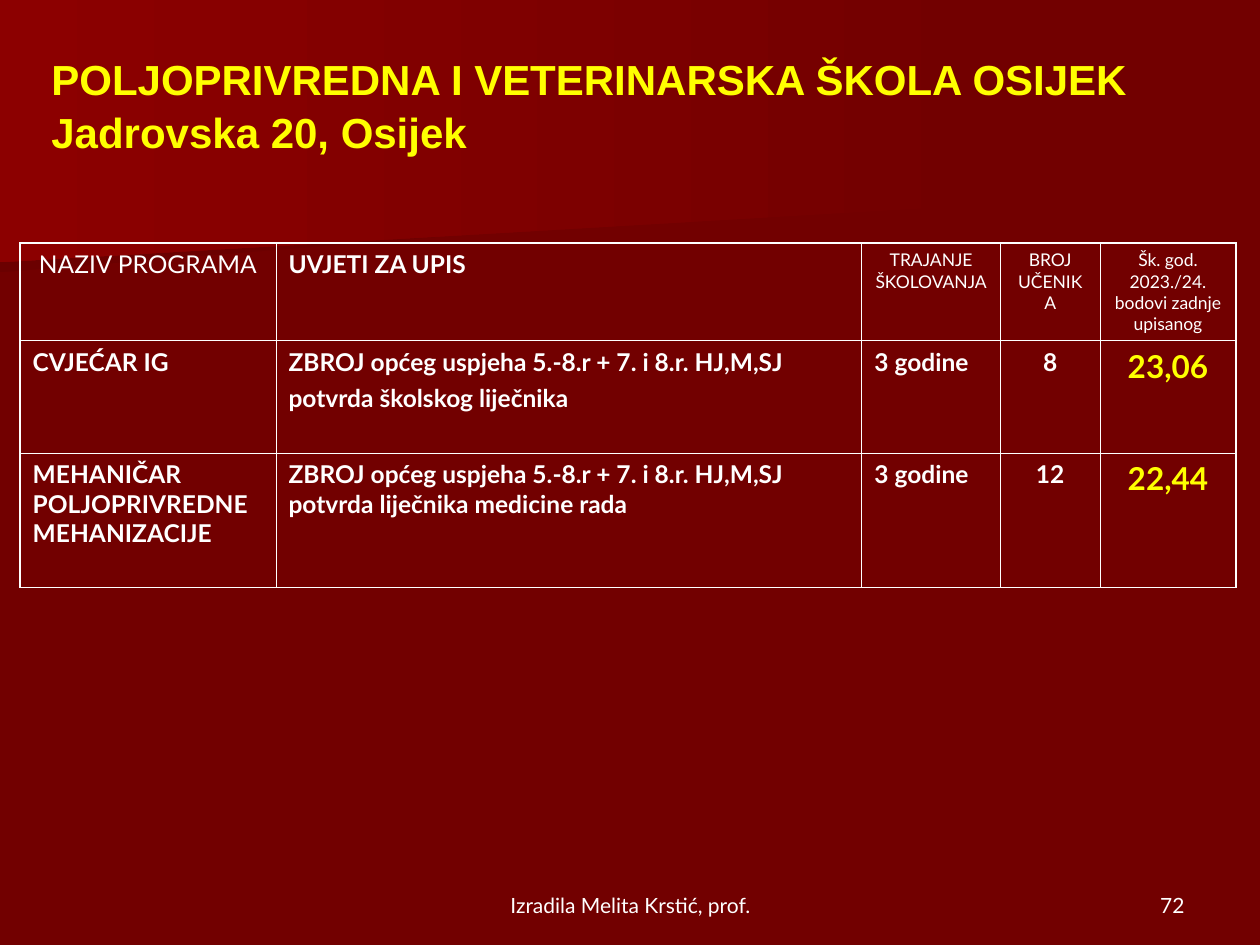
from lxml.etree import SubElement
from pptx import Presentation
from pptx.dml.color import RGBColor
from pptx.enum.text import MSO_ANCHOR as Anchor, PP_ALIGN as Align
from pptx.oxml.ns import qn
from pptx.util import Pt

PX = 9144
WHITE, GOLD = "FFFFFF", "FFFF00"
COLS = [203, 465, 110, 79, 108]
ROWS = [77, 89, 107]
HEADS = ["NAZIV PROGRAMA", "UVJETI ZA UPIS", "TRAJANJE ŠKOLOVANJA",
         "BROJ UČENIKA", "Šk. god. 2023./24. bodovi zadnje upisanog"]
RULE = "ZBROJ općeg uspjeha 5.-8.r + 7. i 8.r. HJ,M,SJ"
BODY = [
    (["CVJEĆAR IG", RULE + "\npotvrda školskog liječnika", "3 godine", "8", "23,06"], 3.5),
    (["MEHANIČAR POLJOPRIVREDNE MEHANIZACIJE",
      RULE + "\npotvrda liječnika medicine rada", "3 godine", "12", "22,44"], 0),
]


def px(n):
    return round(n * PX)


def color(code):
    return RGBColor.from_string(code)


def write(frame, text, size=14, font="Lato", ink=WHITE, bold=False,
          align=Align.LEFT, line=1.0, gap=0):
    frame.word_wrap = True
    for i, part in enumerate(text.split("\n")):
        para = frame.paragraphs[0] if i == 0 else frame.add_paragraph()
        para.alignment, para.line_spacing = align, line
        if i:
            para.space_before = Pt(gap)
        run = para.add_run()
        run.text = part
        run.font.size, run.font.name, run.font.bold = Pt(size), font, bold
        run.font.color.rgb = color(ink)


def label(slide, box, text, anchor=Anchor.BOTTOM, **style):
    frame = slide.shapes.add_textbox(*map(px, box)).text_frame
    frame.vertical_anchor = anchor
    write(frame, text, **style)


def glow(slide, box, points, tint):
    left, top, wide, high = box
    spots = [(left + x * wide / 100, top + y * high / 100) for x, y in points]
    build = slide.shapes.build_freeform(*spots[0], scale=PX)
    build.add_line_segments(spots[1:], close=True)
    shape = build.convert_to_shape()
    shape.shadow.inherit = False
    shape.line.fill.background()
    shape.fill.gradient()
    shape.fill.gradient_angle = 180
    for stop, code in zip(shape.fill.gradient_stops, ["720000", tint]):
        stop.color.rgb = color(code)
        stop.position = 0 if code == "720000" else 1


def backdrop(slide):
    slide.background.fill.solid()
    slide.background.fill.fore_color.rgb = color("720000")
    glow(slide, (0, 101, 779, 115), [(100, 45), (0, 100), (0, 0), (100, 0)], "6B0000")
    glow(slide, (0, 0, 792, 208), [(100, 78), (0, 100), (0, 0), (100, 0)], "8C0000")


def border(cell, row, col):
    props = cell._tc.get_or_add_tcPr()
    outer = {"lnL": col == 0, "lnR": col == len(COLS) - 1, "lnT": row == 0, "lnB": False}
    for i, (tag, thick) in enumerate(outer.items()):
        edge = SubElement(props, qn("a:" + tag), w=str(Pt(1.08 if thick else 0.45)))
        fill = SubElement(edge, qn("a:solidFill"))
        SubElement(fill, qn("a:srgbClr"), val=WHITE)
        props.remove(edge)
        props.insert(i, edge)


def cell_style(row, col):
    align = Align.CENTER if col > 2 or (row == 0 and col != 1) else Align.LEFT
    if row == 0:
        return dict(size=14 if col < 2 else 10, bold=col == 1, align=align)
    if col == 4:
        return dict(size=18, bold=True, ink=GOLD, align=align)
    return dict(bold=True, align=align)


def grid(slide, box):
    table = slide.shapes.add_table(len(ROWS), len(COLS), *map(px, box)).table
    table.first_row = table.horz_banding = False
    for part, wide in zip(table.columns, COLS):
        part.width = px(wide)
    for part, high in zip(table.rows, ROWS):
        part.height = px(high)
    for row, (texts, gap) in enumerate([(HEADS, 0)] + BODY):
        for col, text in enumerate(texts):
            cell = table.cell(row, col)
            cell.fill.background()
            cell.margin_left = cell.margin_right = px(10)
            cell.margin_top = cell.margin_bottom = px(5)
            write(cell.text_frame, text, line=1.01, gap=gap, **cell_style(row, col))
            border(cell, row, col)


def main():
    deck = Presentation()
    deck.slide_width, deck.slide_height = px(1000), px(750)
    slide = deck.slides.add_slide(deck.slide_layouts[6])
    backdrop(slide)
    label(slide, (31, 59, 923, 47),
          "POLJOPRIVREDNA I VETERINARSKA ŠKOLA OSIJEK\nJadrovska 20, Osijek",
          anchor=Anchor.MIDDLE, size=24, font="Arial", ink=GOLD, bold=True, line=1.05)
    grid(slide, (16, 193, sum(COLS), sum(ROWS)))
    label(slide, (342, 683, 317, 50), "Izradila Melita Krstić, prof.",
          size=12, align=Align.CENTER)
    label(slide, (717, 683, 233, 50), "72", size=12, align=Align.RIGHT)
    deck.save("out.pptx")


if __name__ == "__main__":
    main()
